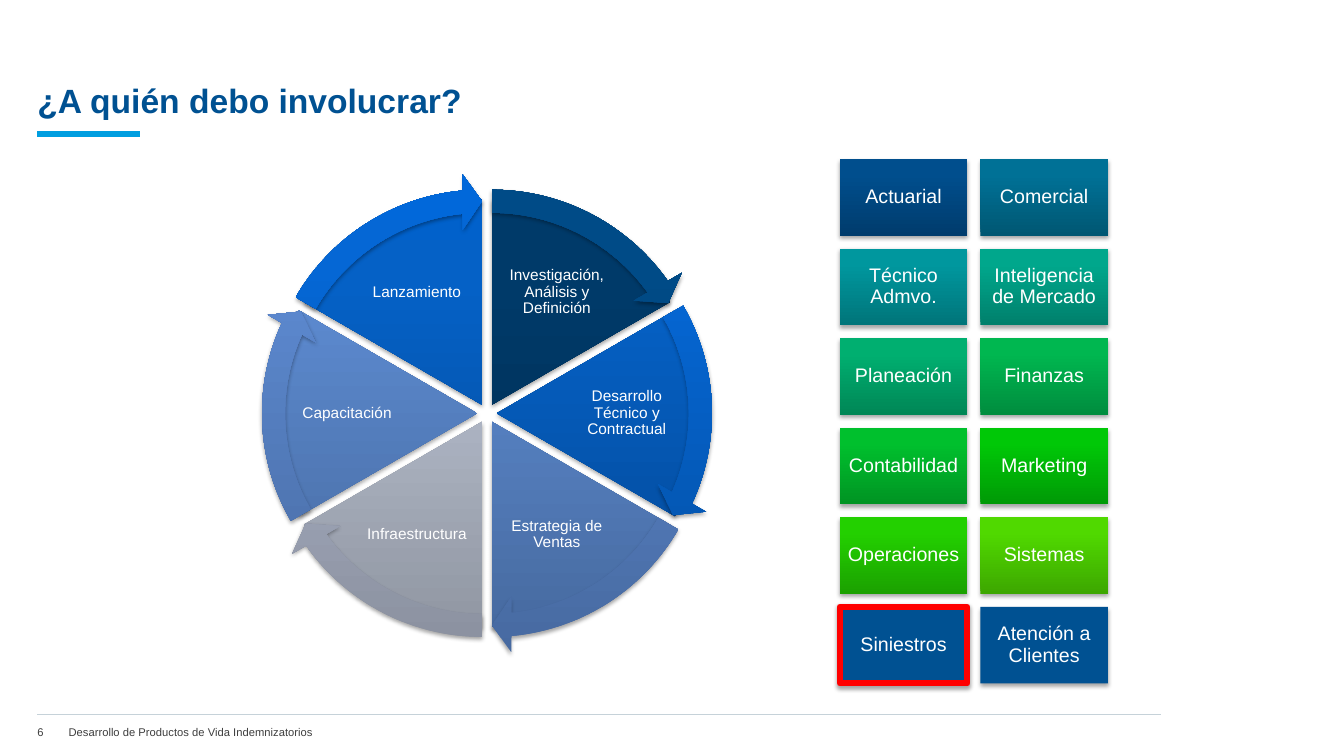
from math import cos, radians, sin
from typing import NamedTuple

from pptx import Presentation
from pptx.dml.color import RGBColor
from pptx.enum.shapes import MSO_CONNECTOR, MSO_SHAPE
from pptx.enum.text import MSO_ANCHOR, PP_ALIGN
from pptx.oxml import parse_xml
from pptx.oxml.ns import nsdecls, qn
from pptx.util import Inches, Pt

PIE = MSO_SHAPE.PIE
ARROW = MSO_SHAPE.CIRCULAR_ARROW
RECTANGLE = MSO_SHAPE.RECTANGLE
STRAIGHT = MSO_CONNECTOR.STRAIGHT
LEFT, CENTER = PP_ALIGN.LEFT, PP_ALIGN.CENTER
MIDDLE, BOTTOM = MSO_ANCHOR.MIDDLE, MSO_ANCHOR.BOTTOM


class Theme:
    font = "Arial"
    title, accent, rule, footer = "005192", "009EE0", "C6D2D9", "3E3E3E"
    white, highlight = "FFFFFF", "FF0000"
    title_size, area_size, step_size, footer_size = 24, 14, 11, 8
    thick, thin = 4.5, 0.75


# Gradient colours run from bottom to top, with stops at these percentages.
STOPS = (0, 80, 100)
BLUE_STEP = (("044A99", "0561C6", "0161CB"), ("0450A4", "0567D5", "0168DA"))
SOFT_STEP = (("476BA1", "5D8BD1", "5B8BD4"), ("476AA1", "5D8AD1", "5B8AD4"))

# Each step: label, slice gradient and arrow gradient, clockwise from the top.
STEPS = [
    ("Investigación, Análisis y Definición",
     ("002D51", "003A69", "003A69"), ("003A68", "004B87", "004B88")),
    ("Desarrollo Técnico y Contractual", *BLUE_STEP),
    ("Estrategia de Ventas", *SOFT_STEP),
    ("Infraestructura",
     ("9197A3", "BCC4D4", "BDC4D5"), ("8A909F", "B3BBCF", "B3BCD0")),
    ("Capacitación", *SOFT_STEP),
    ("Lanzamiento", *BLUE_STEP),
]

AREAS = [
    ("Actuarial", ("003C6D", "004E8D", "004F8E")),
    ("Comercial", ("005773", "007196", "007297")),
    ("Técnico Admvo.", ("00757A", "00979E", "00989F")),
    ("Inteligencia de Mercado", ("00806C", "00A78C", "00A78D")),
    ("Planeación", ("008756", "00AF70", "00B070")),
    ("Finanzas", ("008D3E", "00B750", "00B851")),
    ("Contabilidad", ("009423", "00C02D", "00C12E")),
    ("Marketing", ("009A06", "00C807", "00C907")),
    ("Operaciones", ("1BA100", "23D000", "23D100")),
    ("Sistemas", ("3DA700", "50D900", "50DA00")),
    ("Siniestros", ("005192",)),
    ("Atención a Clientes", ("005192",)),
]
HIGHLIGHTED_AREA = "Siniestros"


class Box(NamedTuple):
    left: float
    top: float
    width: float
    height: float

    def share(self, left, top, width, height):
        """Return an inner box given in percent of this one."""
        return Box(self.left + self.width * left / 100, self.top + self.height * top / 100,
                   self.width * width / 100, self.height * height / 100)

    def centered(self, width, height, shift_x=0, shift_y=0):
        """Return a box of percent size, its centre shifted from this one's by percent."""
        return self.share(50 - width / 2 + shift_x, 50 - height / 2 + shift_y, width, height)

    def lengths(self):
        return [Inches(value) for value in self]


SLIDE = Box(0, 0, 13.33, 7.5)


def color(value):
    return RGBColor.from_string(value)


def write(shape, text, size, text_color, align=LEFT, anchor=MIDDLE,
          margins=(0, 0, 0, 0), bold=False, spacing=1.0):
    frame = shape.text_frame
    frame.word_wrap = True
    frame.vertical_anchor = anchor
    (frame.margin_left, frame.margin_top,
     frame.margin_right, frame.margin_bottom) = [Inches(margin) for margin in margins]
    frame.text = text
    paragraph = frame.paragraphs[0]
    paragraph.alignment = align
    paragraph.line_spacing = spacing
    font = paragraph.runs[0].font
    font.name, font.size, font.bold = Theme.font, Pt(size), bold
    font.color.rgb = color(text_color)


def add_text(slide, box, text, size, text_color, **options):
    write(slide.shapes.add_textbox(*box.lengths()), text, size, text_color, **options)


def add_rule(slide, box, line_color, width):
    """Draw a horizontal line along the top of the box."""
    left, top, length, _ = box.lengths()
    connector = slide.shapes.add_connector(STRAIGHT, left, top, left + length, top)
    connector.line.color.rgb = color(line_color)
    connector.line.width = Pt(width)
    connector._element.spPr.append(parse_xml(f"<a:effectLst {nsdecls('a')}/>"))


def add_raised_shape(slide, kind, box, colors, adjustments=()):
    """Add a preset shape with a solid or gradient fill and a soft shadow."""
    shape = slide.shapes.add_shape(kind, *box.lengths())
    for index, value in enumerate(adjustments):
        shape.adjustments[index] = value
    shape.line.fill.background()
    properties = shape._element.spPr
    if len(colors) == 1:
        shape.fill.solid()
        shape.fill.fore_color.rgb = color(colors[0])
    else:
        shape.fill.gradient()
        shape.fill.gradient_angle = 90
        stop_list = properties.find(qn("a:gradFill")).find(qn("a:gsLst"))
        for stop in list(stop_list):
            stop_list.remove(stop)
        for position, value in zip(STOPS, colors):
            stop_list.append(parse_xml(
                f'<a:gs {nsdecls("a")} pos="{position * 1000}"><a:srgbClr val="{value}"/></a:gs>'))
    shape.shadow.inherit = False
    properties.find(qn("a:effectLst")).append(parse_xml(
        f'<a:outerShdw {nsdecls("a")} blurRad="{Pt(3.1)}" dist="{Pt(1.8)}" dir="5400000" '
        'rotWithShape="0"><a:srgbClr val="000000"><a:alpha val="35000"/></a:srgbClr>'
        '</a:outerShdw>'))
    return shape


def add_title(slide, box):
    add_text(slide, box.share(0, 0, 100, 90), "¿A quién debo involucrar?", Theme.title_size,
             Theme.title, anchor=BOTTOM, margins=(0, 0, 0, 0.04), bold=True)
    add_rule(slide, box.share(0, 100, 8.1, 0), Theme.accent, Theme.thick)


def add_footer(slide, box):
    add_rule(slide, box, Theme.rule, Theme.thin)
    add_text(slide, box.share(0, 17, 2.78, 83), "6", Theme.footer_size, Theme.footer)
    add_text(slide, box.share(2.78, 17, 97.22, 83),
             "Desarrollo de Productos de Vida Indemnizatorios", Theme.footer_size, Theme.footer)


def add_step_wheel(slide, box):
    """Draw the exploded slices with their labels, then the arrows around them."""
    step_angle = 360 / len(STEPS)
    slice_shift, label_shift, arrow_size = 2.38, 34, 112.5
    units_per_degree = 0.6  # preset angles are 60000ths of a degree, adjustments 100000ths
    arrow_thickness, head_angle, head_width = 0.05, 3.28, 0.06
    arrows = []
    for index, (label, slice_colors, arrow_colors) in enumerate(STEPS):
        start = (270 + index * step_angle) % 360
        end = (start + step_angle) % 360
        middle = radians(start + step_angle / 2)
        across, down = cos(middle), sin(middle)
        shift = (across * slice_shift, down * slice_shift)
        start_value, end_value = start * units_per_degree, end * units_per_degree
        add_raised_shape(slide, PIE, box.centered(100, 100, *shift), slice_colors,
                         (start_value, end_value))
        add_text(slide, box.centered(26.5, 20, across * label_shift, down * label_shift),
                 label, Theme.step_size, Theme.white, align=CENTER,
                 margins=(0.02,) * 4, spacing=0.9)
        arrows.append((box.centered(arrow_size, arrow_size, *shift), arrow_colors,
                       (arrow_thickness, head_angle, end_value - head_angle,
                        start_value, head_width)))
    for arrow in arrows:
        add_raised_shape(slide, ARROW, *arrow)


def add_area_grid(slide, box, columns=2, gap=0.13):
    rows = len(AREAS) // columns
    width = (box.width - gap * (columns - 1)) / columns
    height = (box.height - gap * (rows - 1)) / rows
    for index, (name, colors) in enumerate(AREAS):
        row, column = divmod(index, columns)
        cell = Box(box.left + column * (width + gap), box.top + row * (height + gap),
                   width, height)
        tile = add_raised_shape(slide, RECTANGLE, cell, colors)
        write(tile, name, Theme.area_size, Theme.white, align=CENTER,
              margins=(0.06,) * 4, spacing=0.9)
        if name == HIGHLIGHTED_AREA:
            tile.line.color.rgb = color(Theme.highlight)
            tile.line.width = Pt(Theme.thick)


def main():
    presentation = Presentation()
    presentation.slide_width, presentation.slide_height = SLIDE.lengths()[2:]
    slide = presentation.slides.add_slide(presentation.slide_layouts[6])
    add_title(slide, SLIDE.share(2.78, 4.8, 94.45, 12.93))
    add_footer(slide, SLIDE.share(2.78, 94.53, 83.57, 3.87))
    add_step_wheel(slide, SLIDE.share(20.93, 27.47, 30.61, 54.4))
    add_area_grid(slide, SLIDE.share(62.49, 21.07, 19.95, 69.33))
    presentation.save("out.pptx")


if __name__ == "__main__":
    main()
